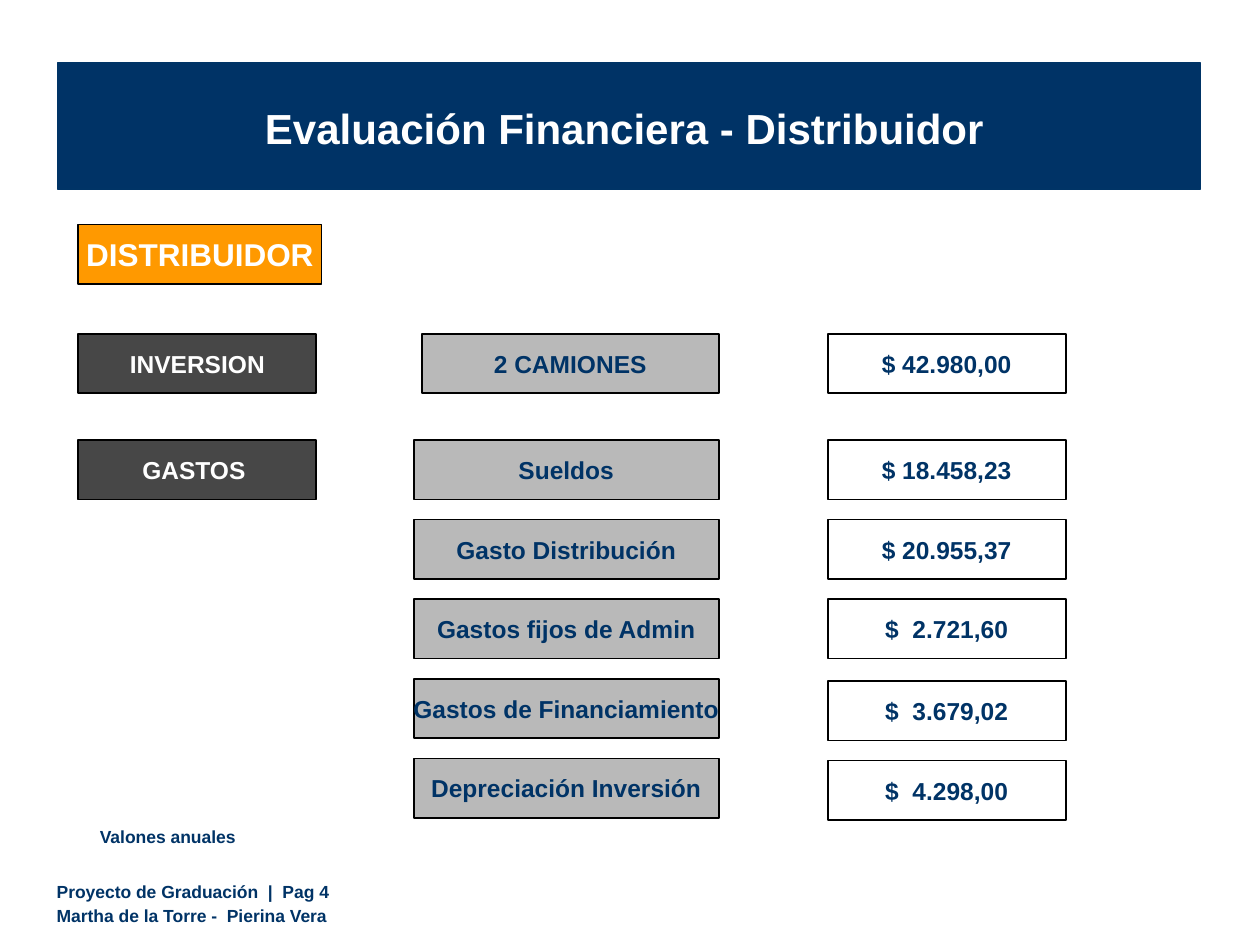
from lxml import etree
from pptx import Presentation
from pptx.dml.color import RGBColor
from pptx.enum.shapes import MSO_SHAPE
from pptx.enum.text import MSO_ANCHOR, PP_ALIGN
from pptx.oxml.ns import qn
from pptx.util import Pt

RECTANGLE = MSO_SHAPE.RECTANGLE
TOP, MIDDLE, BOTTOM = MSO_ANCHOR.TOP, MSO_ANCHOR.MIDDLE, MSO_ANCHOR.BOTTOM
LEFT, CENTER = PP_ALIGN.LEFT, PP_ALIGN.CENTER

# Content
TITLE = "Evaluación Financiera - Distribuidor"
SECTION = "DISTRIBUIDOR"
INVESTMENT = ("INVERSION", "2 CAMIONES", "$ 42.980,00")
EXPENSES_LABEL = "GASTOS "
EXPENSES = [
    ("Sueldos", "$ 18.458,23"),
    ("Gasto Distribución", "$ 20.955,37"),
    ("Gastos fijos de Admin", "$  2.721,60"),
    ("Gastos de Financiamiento", "$  3.679,02"),
    ("Depreciación Inversión", "$  4.298,00"),
]
NOTE = "Valones anuales"
FOOTER = ["Proyecto de Graduación  |  Pag 4", "Martha de la Torre -  Pierina Vera"]

THEME = {
    "font": "Arial",
    "navy": "003366", "banner_line": "003466", "orange": "FF9900",
    "dark": "333333", "gray": "B2B2B2", "white": "FFFFFF", "black": "000000",
    "title": 24, "section": 18, "body": 14, "small": 10,
    "opacity": 90,
}

# Layout in points
LABEL_X, LABEL_W = 44.8, 136
CONCEPT_X, CONCEPT_W = 236.4, 174.4
TRUCKS_X, TRUCKS_W = 241, 169.8
AMOUNT_X, AMOUNT_W = 473, 136
BOX_H = 34
SECTION_Y, INVESTMENT_Y, EXPENSES_Y = 128.2, 190.8, 251.4
ROW_PITCH = 45.5
LOWER_AMOUNTS_DROP = 1.2  # last two amounts sit slightly lower


def color(name):
    return RGBColor.from_string(THEME[name])


def write(shape, lines, size, ink, align=CENTER, anchor=MIDDLE, wrap=False, gap=0):
    frame = shape.text_frame
    frame.word_wrap = wrap
    frame.vertical_anchor = anchor
    frame.text = "\n".join(lines)
    for paragraph in frame.paragraphs:
        paragraph.alignment = align
        paragraph.space_before = Pt(gap)
        font = paragraph.font
        font.name, font.size, font.bold = THEME["font"], Pt(THEME[size]), True
        font.color.rgb = color(ink)
    return frame


def add_rectangle(slide, bounds, fill, line="black", weight=1, opacity=100):
    shape = slide.shapes.add_shape(RECTANGLE, *map(Pt, bounds))
    shape.shadow.inherit = False
    if fill:
        shape.fill.solid()
        shape.fill.fore_color.rgb = color(fill)
    else:
        shape.fill.background()
    if opacity < 100:
        solid = shape._element.spPr.find(qn("a:solidFill"))
        etree.SubElement(solid[0], qn("a:alpha"), val=str(opacity * 1000))
    shape.line.color.rgb = color(line)
    shape.line.width = Pt(weight)
    return shape


def add_cell(slide, x, y, width, text, fill, ink="navy"):
    cell = add_rectangle(slide, (x, y, width, BOX_H), fill, opacity=THEME["opacity"])
    write(cell, [text], "body", ink)


def main():
    prs = Presentation()
    prs.slide_width, prs.slide_height = Pt(720), Pt(540)
    slide = prs.slides.add_slide(prs.slide_layouts[6])

    # Footer
    footer = slide.shapes.add_textbox(Pt(32.4), Pt(503.3), Pt(437), Pt(26))
    frame = write(footer, FOOTER, "small", "navy", LEFT, TOP, True, 1.8)
    frame.margin_left = frame.margin_top = frame.margin_right = frame.margin_bottom = 0

    # Title banner
    add_rectangle(slide, (33, 36, 653, 72), "navy", "banner_line", 0.75)
    title = slide.shapes.add_textbox(Pt(33.8), Pt(54.7), Pt(646), Pt(36))
    write(title, [TITLE], "title", "white", anchor=BOTTOM, wrap=True)

    # Section tag
    section = add_rectangle(slide, (LABEL_X, SECTION_Y, 139, BOX_H), "orange")
    write(section, [SECTION], "section", "white")

    # Investment row
    label, concept, amount = INVESTMENT
    add_cell(slide, LABEL_X, INVESTMENT_Y, LABEL_W, label, "dark", "white")
    add_cell(slide, TRUCKS_X, INVESTMENT_Y, TRUCKS_W, concept, "gray")
    add_cell(slide, AMOUNT_X, INVESTMENT_Y, AMOUNT_W, amount, "white")

    # Expense rows
    add_cell(slide, LABEL_X, EXPENSES_Y, LABEL_W, EXPENSES_LABEL, "dark", "white")
    for row, (concept, amount) in enumerate(EXPENSES):
        y = EXPENSES_Y + row * ROW_PITCH
        drop = LOWER_AMOUNTS_DROP if row >= 3 else 0
        add_cell(slide, CONCEPT_X, y, CONCEPT_W, concept, "gray")
        add_cell(slide, AMOUNT_X, y + drop, AMOUNT_W, amount, "white")

    # Note
    note = add_rectangle(slide, (36.8, 468.6, 118, 20), None, "white")
    write(note, [NOTE], "small", "navy", anchor=TOP, wrap=True)

    prs.save("out.pptx")


if __name__ == "__main__":
    main()
